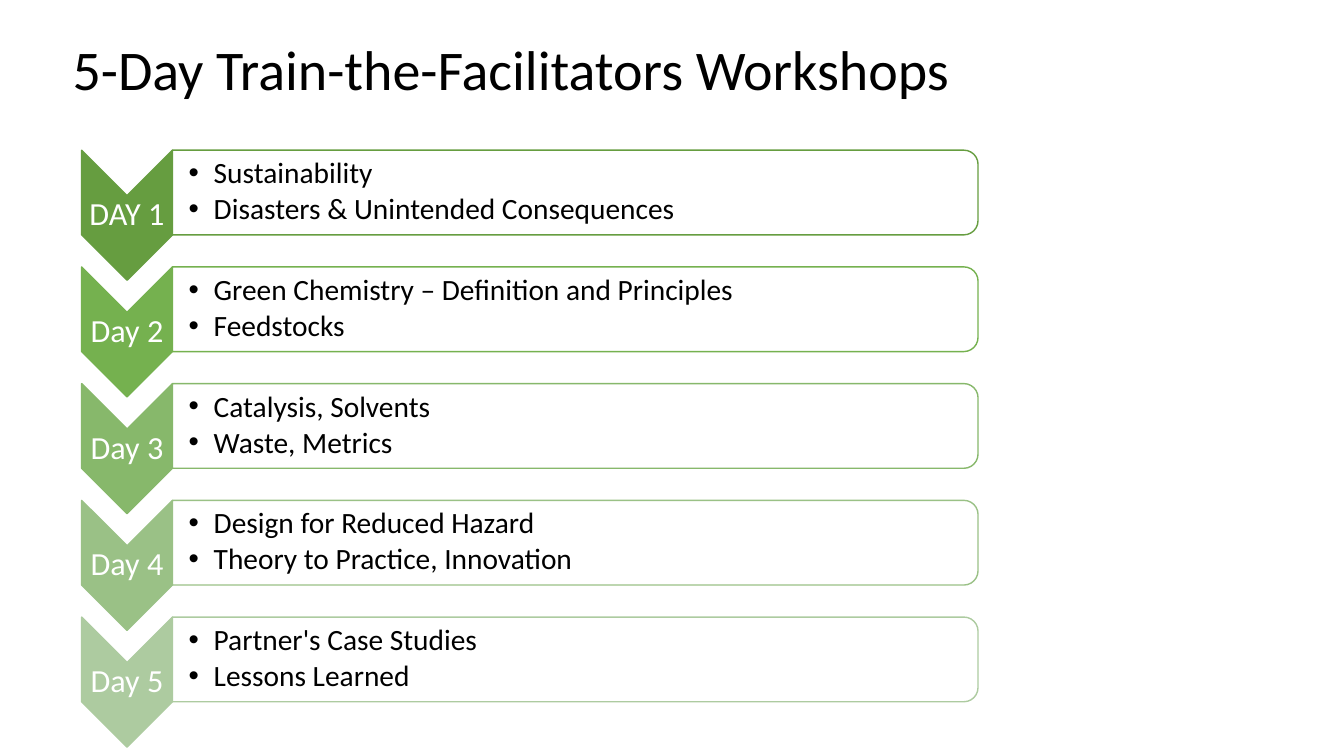
from dataclasses import dataclass

from lxml.etree import SubElement
from pptx import Presentation
from pptx.dml.color import RGBColor
from pptx.enum.shapes import MSO_SHAPE as Shape
from pptx.enum.text import MSO_ANCHOR as Anchor, MSO_AUTO_SIZE as AutoSize, PP_ALIGN as Align
from pptx.oxml.ns import qn
from pptx.slide import Slide
from pptx.text.text import Font, TextFrame
from pptx.util import Inches, Pt

COLORS = {
    "text": "000000",
    "white": "FFFFFF",
    "day1": "669D40",
    "day2": "75B14F",
    "day3": "87B86B",
    "day4": "9AC186",
    "day5": "ADCBA0",
}
FIRST_TOP = 1.49
DAY_PITCH = 1.158
CHEVRON_LENGTH, CHEVRON_WIDTH = 1.29, 0.9
PANEL_HEIGHT, PANEL_WIDTH = 0.84, 7.99
CHEVRON_LEFT = 0.81
PANEL_LEFT = CHEVRON_LEFT + CHEVRON_WIDTH


@dataclass
class WorkshopDay:
    label: str
    color: str
    topics: tuple[str, str]


DAYS = [
    WorkshopDay("DAY 1", "day1", ("Sustainability", "Disasters & Unintended Consequences")),
    WorkshopDay("Day 2", "day2", ("Green Chemistry – Definition and Principles", "Feedstocks")),
    WorkshopDay("Day 3", "day3", ("Catalysis, Solvents", "Waste, Metrics")),
    WorkshopDay("Day 4", "day4", ("Design for Reduced Hazard", "Theory to Practice, Innovation")),
    WorkshopDay("Day 5", "day5", ("Partner's Case Studies", "Lessons Learned")),
]


def rgb(name: str) -> RGBColor:
    return RGBColor.from_string(COLORS[name])


def style_font(font: Font, size: int, color: str) -> None:
    font.name = "Calibri"
    font.size = Pt(size)
    font.color.rgb = rgb(color)


def add_turned_shape(slide: Slide, kind: Shape, left: float, top: float,
                     width: float, height: float, fill: str, line: str) -> None:
    shift = (width - height) / 2
    shape = slide.shapes.add_shape(
        kind, Inches(left + shift), Inches(top - shift), Inches(height), Inches(width))
    shape.rotation = 90
    shape.shadow.inherit = False
    shape.fill.solid()
    shape.fill.fore_color.rgb = rgb(fill)
    shape.line.color.rgb = rgb(line)
    shape.line.width = Pt(1)


def add_text_area(slide: Slide, left: float, top: float, width: float, height: float,
                  inset: float, left_inset: float) -> TextFrame:
    frame = slide.shapes.add_textbox(
        Inches(left), Inches(top), Inches(width), Inches(height)).text_frame
    frame.word_wrap = True
    frame.vertical_anchor = Anchor.MIDDLE
    frame.margin_top = frame.margin_right = frame.margin_bottom = Inches(inset)
    frame.margin_left = Inches(left_inset)
    return frame


def add_title(slide: Slide, wording: str) -> None:
    title = slide.shapes.title
    title.left, title.top = Inches(0.62), Inches(0.29)
    title.width, title.height = Inches(8.98), Inches(0.77)
    frame = title.text_frame
    frame.text = wording
    frame.word_wrap = False
    frame.auto_size = AutoSize.SHAPE_TO_FIT_TEXT
    frame.vertical_anchor = Anchor.TOP
    frame.paragraphs[0].alignment = Align.LEFT
    style_font(frame.paragraphs[0].runs[0].font, 40, "text")


def add_label(slide: Slide, label: str, top: float) -> None:
    frame = add_text_area(slide, CHEVRON_LEFT, top + 0.45, CHEVRON_WIDTH, 0.39, 0.02, 0.02)
    frame.text = label
    paragraph = frame.paragraphs[0]
    paragraph.alignment = Align.CENTER
    paragraph.line_spacing = 0.9
    style_font(paragraph.runs[0].font, 23, "white")


def add_topics(slide: Slide, topics: tuple[str, str], top: float) -> None:
    frame = add_text_area(slide, PANEL_LEFT, top + 0.04, 7.95, 0.75, 0.01, 0.16)
    frame.text = "\n".join(topics)
    for paragraph in frame.paragraphs:
        paragraph.level = 1
        paragraph.line_spacing = 0.9
        paragraph.space_after = Pt(3)
        properties = paragraph._p.get_or_add_pPr()
        properties.set("marL", str(Inches(0.25)))
        properties.set("indent", str(Inches(-0.25)))
        SubElement(properties, qn("a:buFont"), typeface="Arial")
        SubElement(properties, qn("a:buChar"), char="•")
        style_font(paragraph.runs[0].font, 21, "text")


def add_day(slide: Slide, day: WorkshopDay, top: float) -> None:
    add_turned_shape(slide, Shape.CHEVRON, CHEVRON_LEFT, top,
                     CHEVRON_WIDTH, CHEVRON_LENGTH, day.color, day.color)
    add_label(slide, day.label, top)
    add_turned_shape(slide, Shape.ROUND_2_SAME_RECTANGLE, PANEL_LEFT, top,
                     PANEL_WIDTH, PANEL_HEIGHT, "white", day.color)
    add_topics(slide, day.topics, top)


def main() -> None:
    presentation = Presentation()
    presentation.slide_width = Inches(13.33)
    presentation.slide_height = Inches(7.5)
    slide = presentation.slides.add_slide(presentation.slide_layouts.get_by_name("Title Only"))
    add_title(slide, "5-Day Train-the-Facilitators Workshops")
    for index, day in enumerate(DAYS):
        add_day(slide, day, FIRST_TOP + index * DAY_PITCH)
    presentation.save("out.pptx")


if __name__ == "__main__":
    main()
